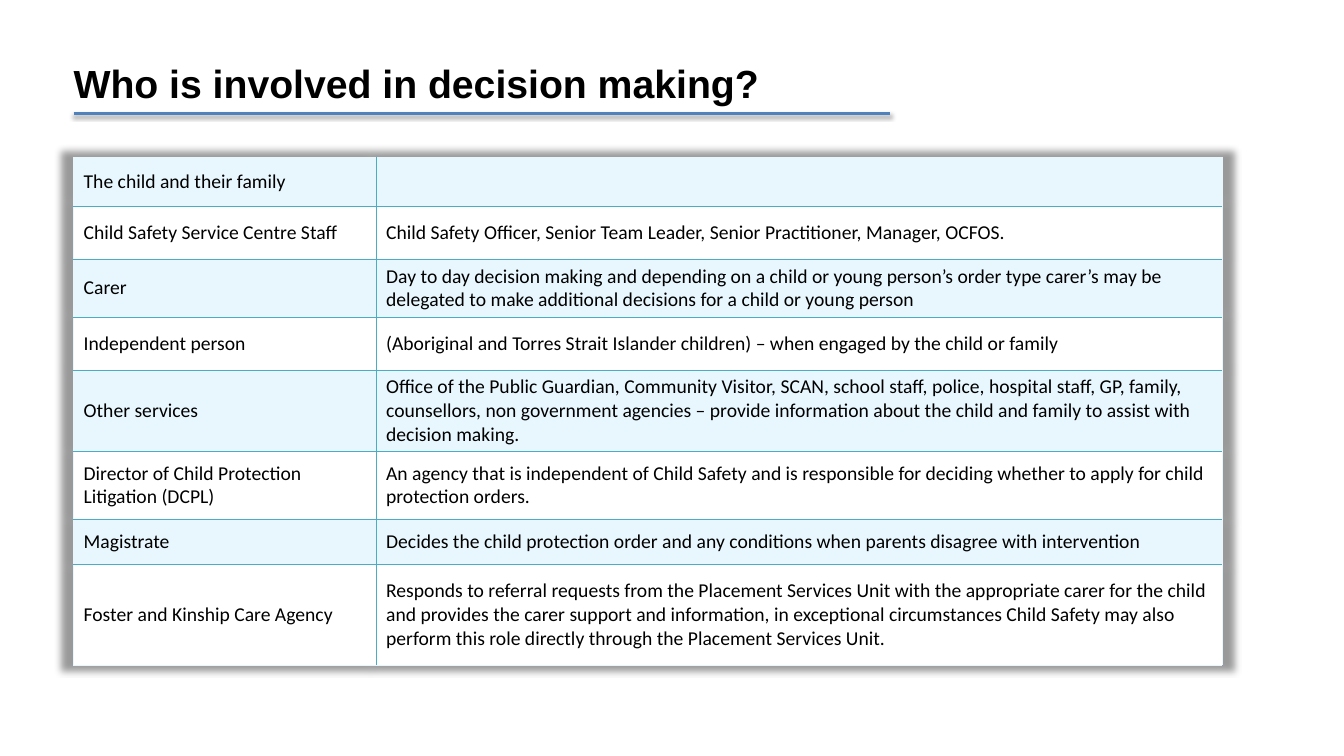
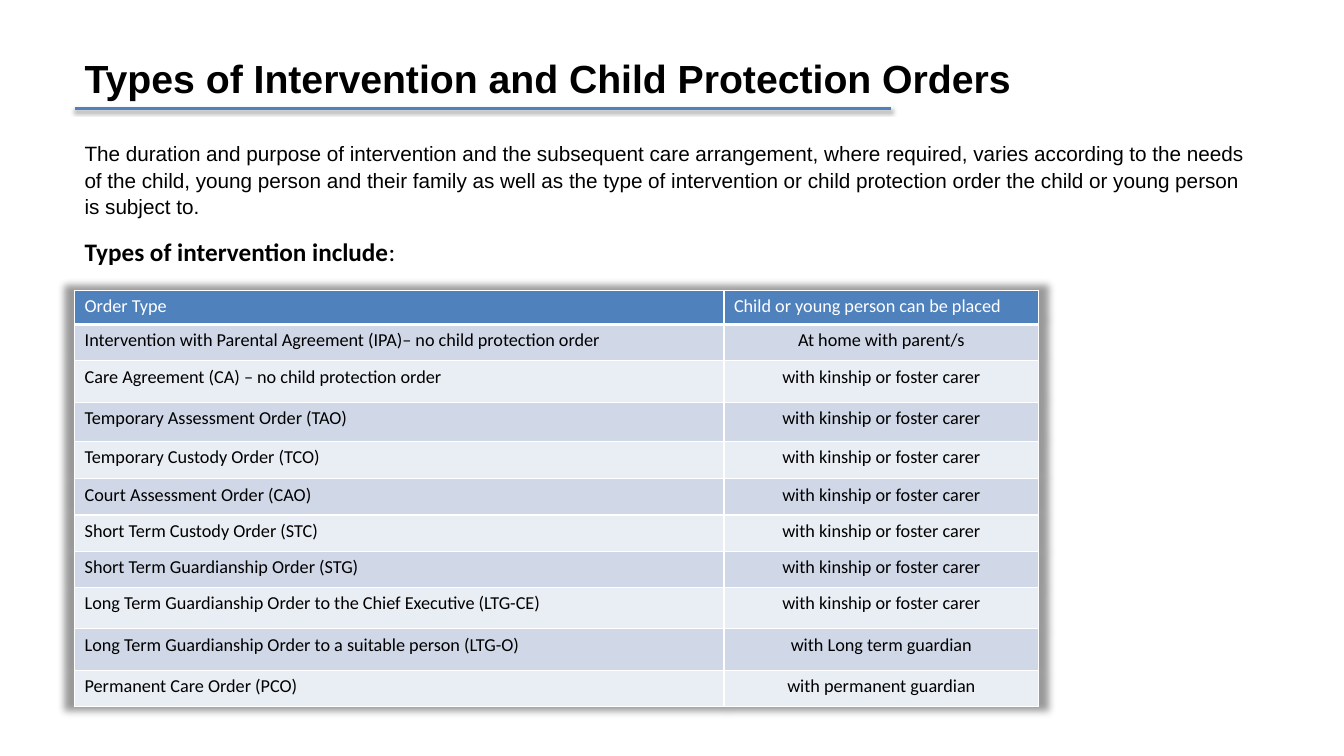
from pptx import Presentation
from pptx import util as u
from pptx.dml.color import RGBColor
from pptx.enum import shapes, text
from pptx.oxml import parse_xml
from pptx.oxml.ns import nsdecls, qn

COLORS = {"black": "000000", "white": "FFFFFF", "blue": "4F81BD", "teal": "4BACC6",
          "pale": "E8F7FE", "band": "D0D8E8", "light": "E9EDF4"}
RGB = {name: RGBColor.from_string(value) for name, value in COLORS.items()}
SHADOW = (f'<a:effectLst {nsdecls("a")}><a:outerShdw %s rotWithShape="0">'
          '<a:srgbClr val="000000"><a:alpha val="%d"/></a:srgbClr>'
          '</a:outerShdw></a:effectLst>')
RULE_SHADOW = SHADOW % ('blurRad="39400" dist="20300" dir="5400000"', 38000)
TABLE_SHADOW = SHADOW % ('blurRad="63500" sx="102000" sy="102000" algn="ctr"', 40000)
RULE_WIDTH = 8.1
TITLE_HEIGHT = 0.62

prs = Presentation()
prs.slide_width, prs.slide_height = u.Inches(13.33), u.Inches(7.5)


def add_titled_slide(title, left, top, width, rule_left):
    """Add a slide whose title has a shadowed rule along its bottom edge."""
    s = prs.slides.add_slide(prs.slide_layouts[5])
    sp = s.shapes.title
    sp.left, sp.top, sp.width, sp.height = map(u.Inches, (left, top, width, TITLE_HEIGHT))
    tf = sp.text_frame
    tf.text = title
    tf.word_wrap = True
    tf.auto_size = text.MSO_AUTO_SIZE.NONE
    tf.vertical_anchor = text.MSO_ANCHOR.MIDDLE
    p = tf.paragraphs[0]
    p.alignment = text.PP_ALIGN.LEFT
    font = p.runs[0].font
    font.name, font.size, font.bold = "Arial", u.Pt(28), True
    font.color.rgb = RGB["black"]

    y = u.Inches(top + TITLE_HEIGHT)
    rule = s.shapes.add_connector(shapes.MSO_CONNECTOR.STRAIGHT, u.Inches(rule_left), y,
                                  u.Inches(rule_left + RULE_WIDTH), y)
    rule.line.color.rgb = RGB["blue"]
    rule.line.width = u.Pt(2)
    rule._element.spPr.append(parse_xml(RULE_SHADOW))
    return s


def add_grid(s, left, top, cols, heights, rows, size, bands, outer, inner, border_pt):
    """Add a shadowed table with alternating fills and separate outer and inner borders."""
    tbl = s.shapes.add_table(len(rows), len(cols), u.Inches(left), u.Inches(top),
                             u.Inches(sum(cols)), u.Inches(sum(heights))).table
    tbl.first_row = tbl.horz_banding = False
    tbl._tbl.tblPr.insert(0, parse_xml(TABLE_SHADOW))
    for col, width in zip(tbl.columns, cols):
        col.width = u.Inches(width)
    for i, (row, height) in enumerate(zip(rows, heights)):
        tbl.rows[i].height = u.Inches(height)
        for j, words in enumerate(row):
            cell = tbl.cell(i, j)
            cell.fill.solid()
            cell.fill.fore_color.rgb = RGB[bands[i % 2]]
            cell.text = words
            font = cell.text_frame.paragraphs[0].font
            font.name, font.size = "Calibri", u.Pt(size)
            for r in cell.text_frame.paragraphs[0].runs:
                r.font.name, r.font.size = "Calibri", u.Pt(size)
                r.font.color.rgb = RGB["black"]
            on_edge = {"L": j == 0, "R": j == len(cols) - 1,
                       "T": i == 0, "B": i == len(rows) - 1}
            for k, (side, is_outer) in enumerate(on_edge.items()):
                color = COLORS[outer if is_outer else inner]
                cell._tc.tcPr.insert(k, parse_xml(
                    f'<a:ln{side} {nsdecls("a")} w="{u.Pt(border_pt)}"><a:solidFill>'
                    f'<a:srgbClr val="{color}"/></a:solidFill></a:ln{side}>'))
    return tbl


# Decision makers
s = add_titled_slide("Who is involved in decision making?", 0.63, 0.51, 8.94, 0.73)
people = [
    ("The child and their family", ""),
    ("Child Safety Service Centre Staff",
     "Child Safety Officer, Senior Team Leader, Senior Practitioner, Manager, OCFOS."),
    ("Carer",
     "Day to day decision making and depending on a child or young person’s order type "
     "carer’s may be delegated to make additional decisions for a child or young person"),
    ("Independent person",
     "(Aboriginal and Torres Strait Islander children) – when engaged by the child or family"),
    ("Other services",
     "Office of the Public Guardian, Community Visitor, SCAN, school staff, police, hospital "
     "staff, GP, family, counsellors, non government agencies – provide information about "
     "the child and family to assist with decision making."),
    ("Director of Child Protection Litigation (DCPL)",
     "An agency that is independent of Child Safety and is responsible for deciding whether "
     "to apply for child protection orders."),
    ("Magistrate",
     "Decides the child protection order and any conditions when parents disagree with "
     "intervention"),
    ("Foster and Kinship Care Agency",
     "Responds to referral requests from the Placement Services Unit with the appropriate "
     "carer for the child and provides the carer support and information, in exceptional "
     "circumstances Child Safety may also perform this role directly through the Placement "
     "Services Unit."),
]
tbl = add_grid(s, 0.73, 1.56, [3, 8.39], [0.49, 0.52, 0.58, 0.52, 0.81, 0.67, 0.45, 1],
               people, 14, ("pale", "white"), "pale", "teal", 0.5)
for cell in tbl.iter_cells():
    cell.vertical_anchor = text.MSO_ANCHOR.MIDDLE

# Order types
LEFT = 0.74
s = add_titled_slide("Types of Intervention and Child Protection Orders", LEFT, 0.46, 9.56, LEFT)
intro = ("The duration and purpose of intervention and the subsequent care arrangement, where "
         "required, varies according to the needs of the child, young person and their family "
         "as well as the type of intervention or child protection order the child or young "
         "person is subject to.")
paragraphs = [
    (1.34, 11.8, 0.78, "Arial", 14.8, 1.05, [(intro, False)]),
    (2.3, 4.33, 0.4, "Calibri", 18, 1.0, [("Types of intervention include", True), (":", False)]),
]
for top, width, height, name, size, spacing, runs in paragraphs:
    tf = s.shapes.add_textbox(*map(u.Inches, (LEFT, top, width, height))).text_frame
    tf.word_wrap = True
    p = tf.paragraphs[0]
    p.line_spacing = spacing
    for words, bold in runs:
        r = p.add_run()
        r.text = words
        r.font.name, r.font.size, r.font.bold = name, u.Pt(size), bold
        r.font.color.rgb = RGB["black"]

KIN = "with kinship or foster carer"
orders = [
    ("Order Type", "Child or young person can be placed"),
    ("Intervention with Parental Agreement (IPA)– no child protection order",
     "At home with parent/s"),
    ("Care Agreement (CA) – no child protection order", KIN),
    ("Temporary Assessment Order (TAO)", KIN),
    ("Temporary Custody Order (TCO)", KIN),
    ("Court Assessment Order (CAO)", KIN),
    ("Short Term Custody Order (STC)", KIN),
    ("Short Term Guardianship Order (STG)", KIN),
    ("Long Term Guardianship Order to the Chief Executive (LTG-CE)", KIN),
    ("Long Term Guardianship Order to a suitable person (LTG-O)", "with Long term guardian"),
    ("Permanent Care Order (PCO)", "with permanent guardian"),
]
heights = [0.34, 0.36, 0.41, 0.39, 0.37, 0.36, 0.36, 0.36, 0.41, 0.41, 0.36]
tbl = add_grid(s, LEFT, 2.88, [6.44, 3.12], heights, orders, 13,
               ("light", "band"), "white", "white", 1)
for j in range(2):
    header = tbl.cell(0, j)
    header.fill.fore_color.rgb = RGB["blue"]
    header.text_frame.paragraphs[0].runs[0].font.color.rgb = RGB["white"]
    header._tc.tcPr.find(qn("a:lnB")).set("w", str(u.Pt(3)))
for i in range(1, len(orders)):
    tbl.cell(i, 1).text_frame.paragraphs[0].alignment = text.PP_ALIGN.CENTER

prs.save("out.pptx")
